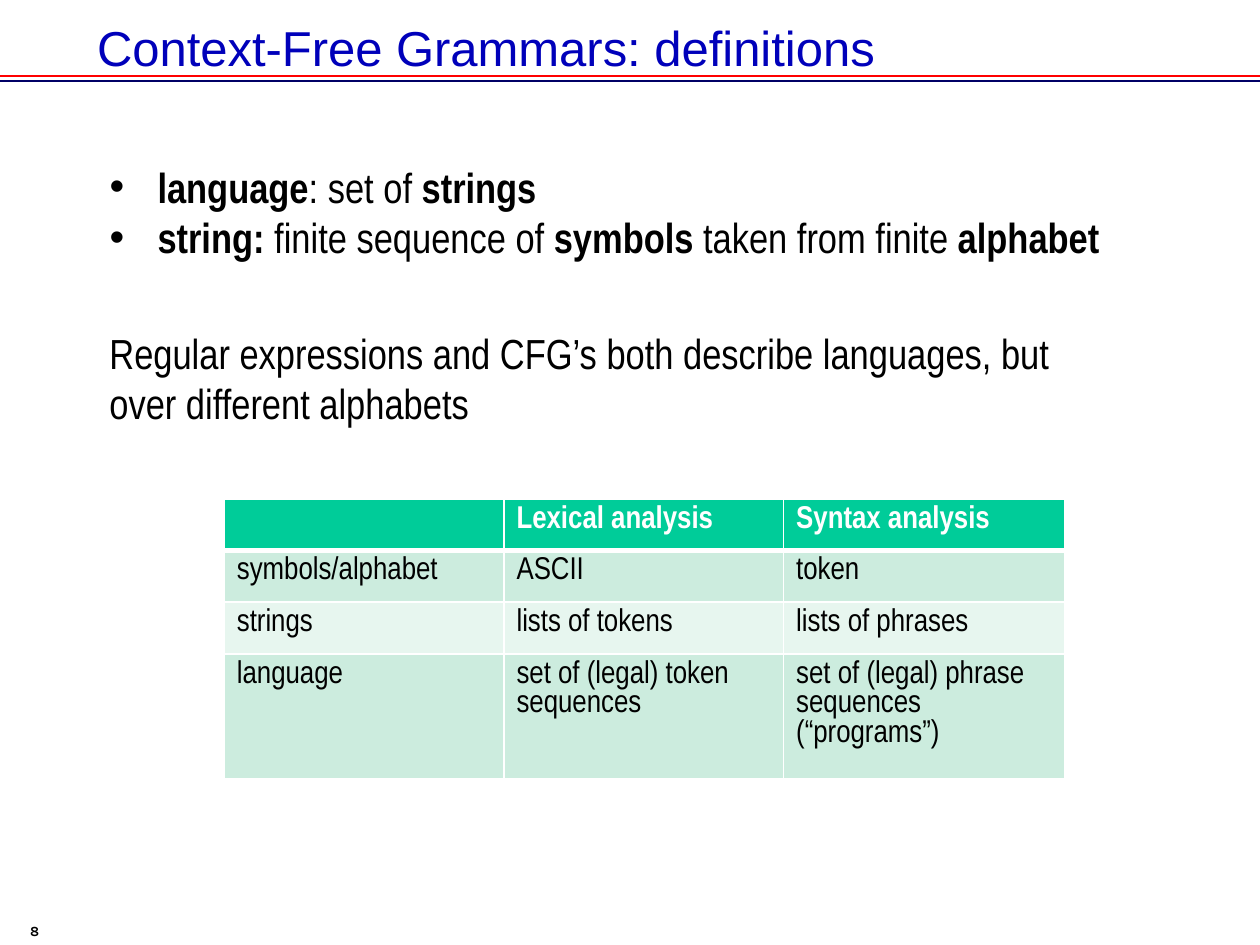
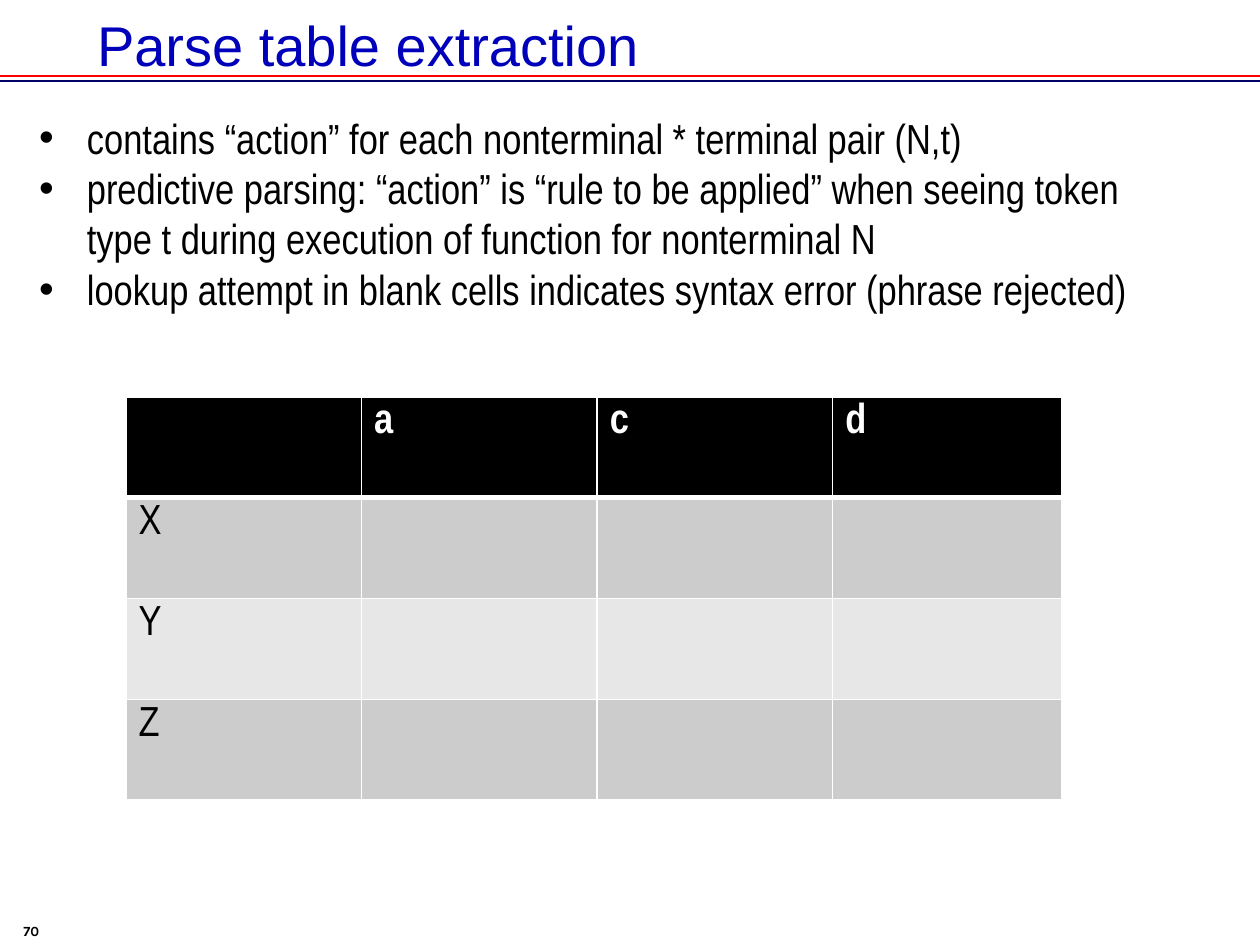
from dataclasses import dataclass

import pptx
import pptx.dml.color
import pptx.enum.shapes
import pptx.enum.text
import pptx.oxml
import pptx.oxml.ns
import pptx.util

PX = 9144  # EMU in one px, at 100 px to the inch
SLIDE_WIDTH, SLIDE_HEIGHT = 1000, 750
HANGING_INDENT = 38
TITLE_AND_CONTENT = 1

COLORS = {
    "title": "0000BA",
    "text": "000000",
    "white": "FFFFFF",
    "red rule": "FF0000",
    "navy rule": "000066",
    "green header": "00CC99",
    "green odd": "CCECDE",
    "green even": "E7F6EF",
    "gray header": "000000",
    "gray odd": "CCCCCC",
    "gray even": "E7E7E7",
}
RULES = {60: "red rule", 64: "navy rule"}

ALIGN = pptx.enum.text.PP_ALIGN
ANCHOR = pptx.enum.text.MSO_ANCHOR
FLUSH = {"alignment": ALIGN.LEFT, "space_before": pptx.util.Pt(0)}
NUMBER_PARAGRAPH = {**FLUSH, "alignment": ALIGN.RIGHT}


@dataclass(frozen=True)
class Box:
    left: int
    top: int
    width: int
    height: int

    def emu(self) -> list[int]:
        return [length * PX for length in (self.left, self.top, self.width, self.height)]


@dataclass(frozen=True)
class Style:
    font: str
    size: int
    color: str = "text"
    bold: bool = False


@dataclass(frozen=True)
class Span:
    text: str
    bold: bool = False


@dataclass(frozen=True)
class Grid:
    left: int
    top: int
    columns: list[int]
    rows: list[int]
    palette: str
    size: int
    cells: list[list[str]]


BODY = Style("Arial Narrow", 24)
NUMBER = Style("Karla", 8, bold=True)


def color(name: str) -> pptx.dml.color.RGBColor:
    return pptx.dml.color.RGBColor.from_string(COLORS[name])


def apply(target, values: dict) -> None:
    for name, value in values.items():
        setattr(target, name, value)


# Text

def write_paragraph(paragraph, spans: list[Span], style: Style, layout: dict) -> None:
    apply(paragraph, layout)
    for span in spans:
        run = paragraph.add_run()
        run.text = span.text
        apply(run.font, {
            "name": style.font,
            "size": pptx.util.Pt(style.size),
            "bold": style.bold or span.bold,
        })
        run.font.color.rgb = color(style.color)


def set_frame(shape, anchor) -> None:
    apply(shape.text_frame, {
        "word_wrap": True,
        "auto_size": pptx.enum.text.MSO_AUTO_SIZE.NONE,
        "vertical_anchor": anchor,
    })


def place(shape, box: Box) -> None:
    apply(shape, dict(zip(("left", "top", "width", "height"), box.emu())))


def add_text(slide, box: Box, text: str, style: Style, layout: dict) -> None:
    shape = slide.shapes.add_textbox(*box.emu())
    set_frame(shape, ANCHOR.TOP)
    write_paragraph(shape.text_frame.paragraphs[0], [Span(text)], style, layout)


def add_bullets(slide, box: Box, items: list[list[Span]]) -> None:
    shape = slide.placeholders[1]
    place(shape, box)
    set_frame(shape, ANCHOR.TOP)
    frame = shape.text_frame
    for index, spans in enumerate(items):
        paragraph = frame.add_paragraph() if index else frame.paragraphs[0]
        write_paragraph(paragraph, spans, BODY, FLUSH)
        properties = paragraph._p.get_or_add_pPr()
        properties.set("marL", str(HANGING_INDENT * PX))
        properties.set("indent", str(-HANGING_INDENT * PX))
        properties.append(pptx.oxml.parse_xml(
            f'<a:buChar {pptx.oxml.ns.nsdecls("a")} char="•"/>'))


# Tables

def add_borders(cell, row: int) -> None:
    """White cell edges, with a heavier one below the header row."""
    widths = {"L": 1, "R": 1, "T": 3 if row == 1 else 1, "B": 1 if row else 3}
    properties = cell._tc.get_or_add_tcPr()
    for index, (side, width) in enumerate(widths.items()):
        properties.insert(index, pptx.oxml.parse_xml(
            f'<a:ln{side} {pptx.oxml.ns.nsdecls("a")} w="{pptx.util.Pt(width)}">'
            f'<a:solidFill><a:srgbClr val="{COLORS["white"]}"/></a:solidFill>'
            f'</a:ln{side}>'))


def add_grid(slide, grid: Grid) -> None:
    box = Box(grid.left, grid.top, sum(grid.columns), sum(grid.rows))
    table = slide.shapes.add_table(
        len(grid.rows), len(grid.columns), *box.emu()).table
    table.horz_banding = False
    for column, width in zip(table.columns, grid.columns):
        column.width = width * PX
    for row, height in zip(table.rows, grid.rows):
        row.height = height * PX
    for row_index, texts in enumerate(grid.cells):
        header = row_index == 0
        band = "header" if header else ("odd" if row_index % 2 else "even")
        style = Style("Arial Narrow", grid.size, "white" if header else "text", header)
        for column_index, text in enumerate(texts):
            cell = table.cell(row_index, column_index)
            cell.fill.solid()
            cell.fill.fore_color.rgb = color(f"{grid.palette} {band}")
            add_borders(cell, row_index)
            if text:
                write_paragraph(cell.text_frame.paragraphs[0], [Span(text)], style, FLUSH)


# Shared slide frame

def add_rule(slide, top: int, color_name: str) -> None:
    rule = slide.shapes.add_connector(
        pptx.enum.shapes.MSO_CONNECTOR.STRAIGHT, 0, top * PX, SLIDE_WIDTH * PX, top * PX)
    rule.line.color.rgb = color(color_name)
    rule.line.width = pptx.util.Pt(1.25)
    rule._element.spPr.append(
        pptx.oxml.parse_xml(f'<a:effectLst {pptx.oxml.ns.nsdecls("a")}/>'))


def add_slide(presentation, title: str, title_size: int, title_height: int, number: str):
    slide = presentation.slides.add_slide(presentation.slide_layouts[TITLE_AND_CONTENT])
    for top, color_name in RULES.items():
        add_rule(slide, top, color_name)
    shape = slide.shapes.title
    place(shape, Box(67, 10, 865, title_height))
    set_frame(shape, ANCHOR.MIDDLE)
    write_paragraph(shape.text_frame.paragraphs[0], [Span(title)],
                    Style("Arial", title_size, "title"), FLUSH)
    add_text(slide, Box(0, 727, 41, 23), number, NUMBER, NUMBER_PARAGRAPH)
    return slide


# Slides

def add_definitions(presentation) -> None:
    slide = add_slide(presentation, "Context-Free Grammars: definitions", 28, 55, "8")
    add_bullets(slide, Box(77, 123, 825, 91), [
        [Span("language", True), Span(": set of "), Span("strings", True)],
        [Span("string: ", True), Span("finite sequence of"), Span(" symbols ", True),
         Span("taken from finite "), Span("alphabet", True)],
    ])
    add_text(slide, Box(77, 255, 815, 91),
             "Regular expressions and CFG’s both describe languages, "
             "but over different alphabets", BODY, FLUSH)
    add_grid(slide, Grid(178, 396, [222, 222, 223], [41, 41, 41, 99], "green", 18, [
        ["", "Lexical analysis", "Syntax analysis"],
        ["symbols/alphabet", "ASCII", "token"],
        ["strings", "lists of tokens", "lists of phrases"],
        ["language", "set of (legal) token sequences",
         "set of (legal) phrase sequences (“programs”)"],
    ]))


def add_table_extraction(presentation) -> None:
    slide = add_slide(presentation, "Parse table extraction", 32, 50, "70")
    add_bullets(slide, Box(21, 84, 912, 172), [
        [Span("contains “action” for each nonterminal * terminal pair (N,t)")],
        [Span("predictive parsing: “action” is “rule to be applied” when seeing "
              "token type t during execution of function for nonterminal N")],
        [Span("lookup attempt in blank cells indicates syntax error (phrase rejected)")],
    ])
    terminals = ["a", "c", "d"]
    blanks = [""] * len(terminals)
    add_grid(slide, Grid(100, 315, [187, 187, 187, 182], [80] * 4, "gray", 24,
                         [["", *terminals]] + [[name, *blanks] for name in "XYZ"]))


def main() -> None:
    presentation = pptx.Presentation()
    presentation.slide_width = SLIDE_WIDTH * PX
    presentation.slide_height = SLIDE_HEIGHT * PX
    add_definitions(presentation)
    add_table_extraction(presentation)
    presentation.save("out.pptx")


if __name__ == "__main__":
    main()
